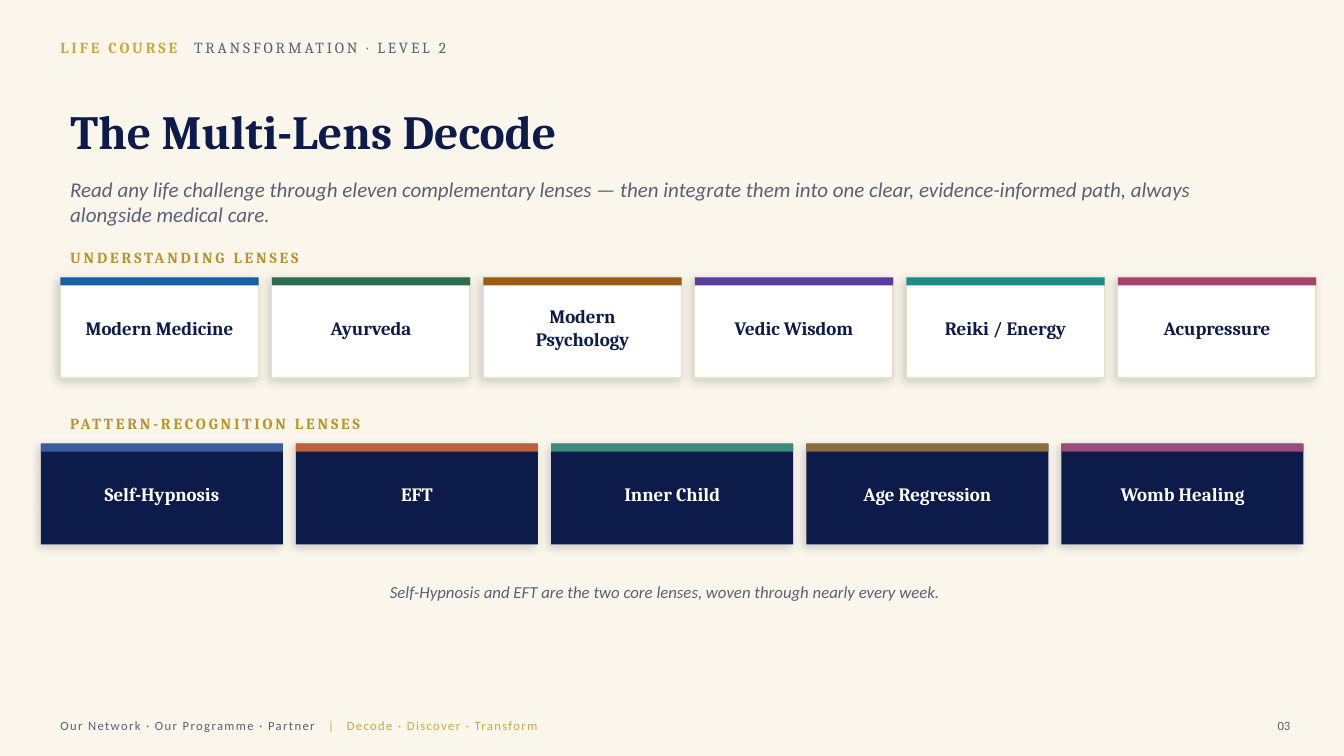
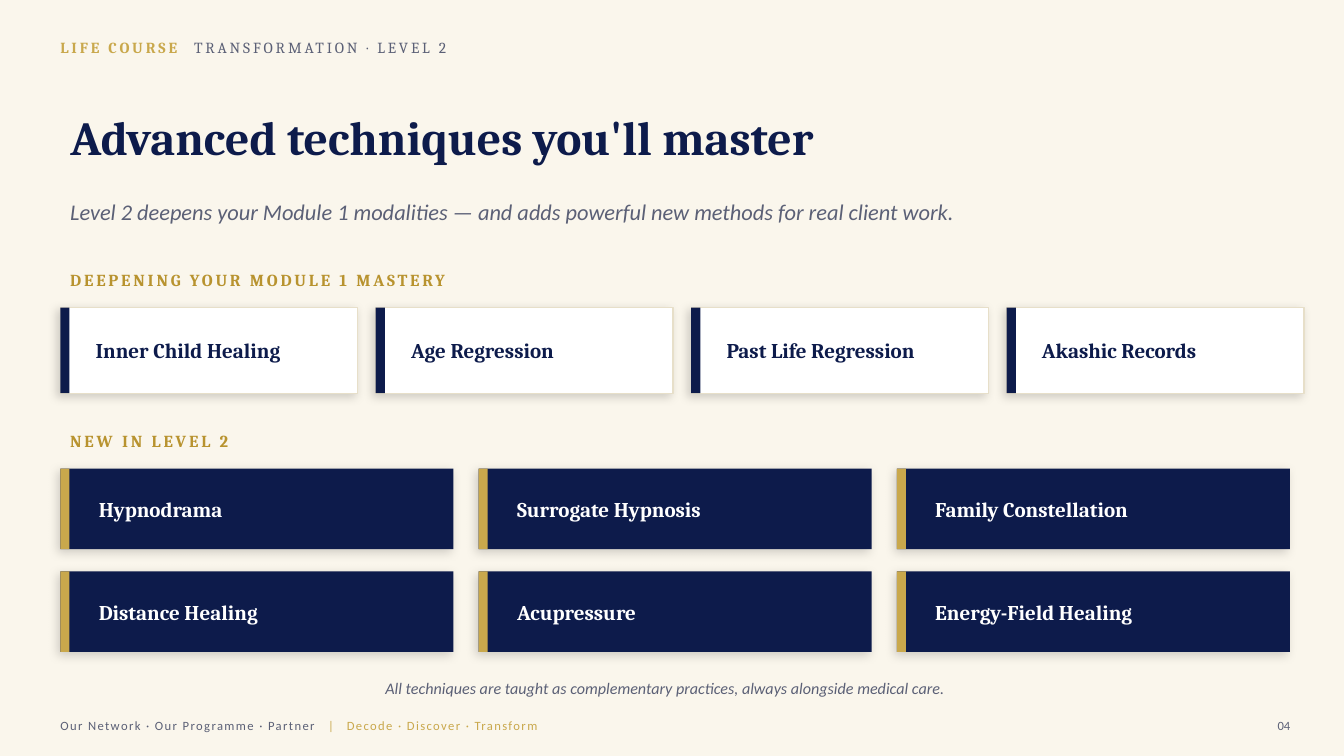
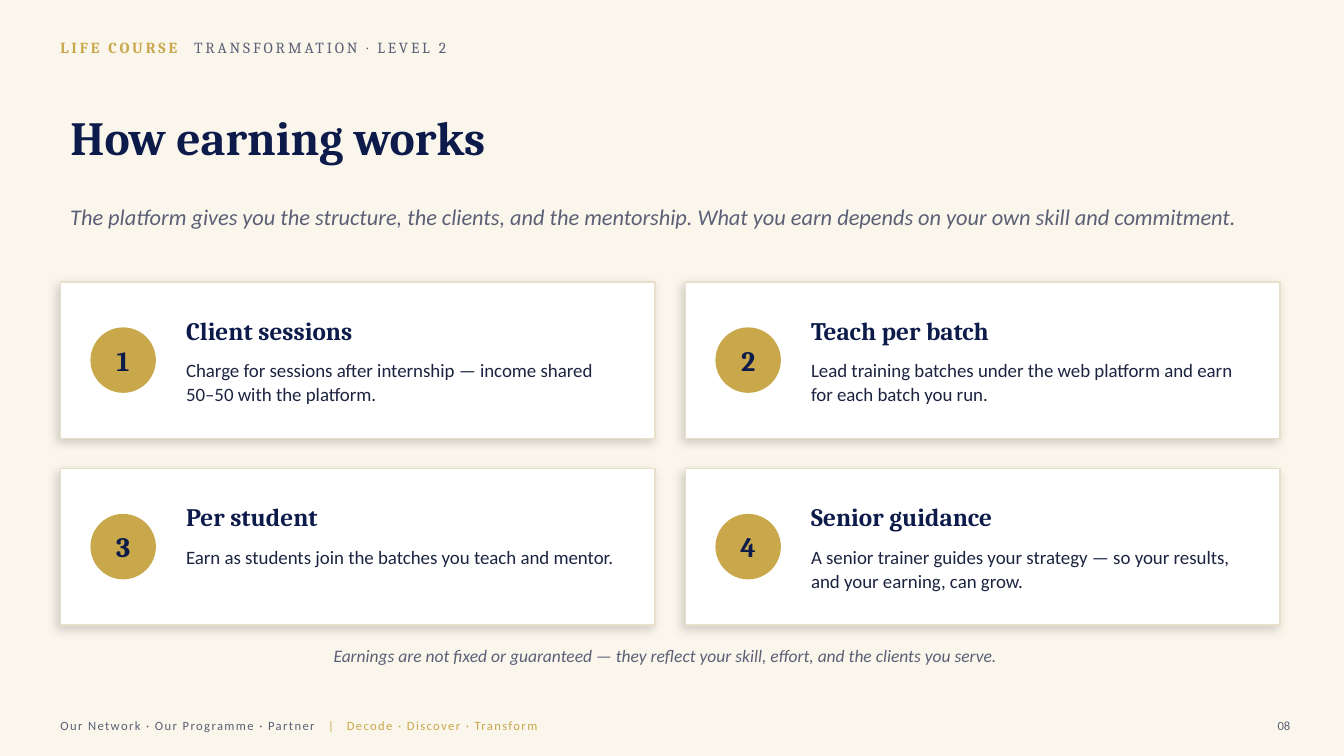
"""Build three slides on lenses, techniques and earning for a Level 2 programme."""
from pptx import Presentation
from pptx.dml.color import RGBColor
from pptx.enum.shapes import MSO_SHAPE as Kind
from pptx.enum.text import MSO_ANCHOR as Anchor, MSO_AUTO_SIZE as AutoSize, PP_ALIGN as Align
from pptx.oxml import parse_xml
from pptx.oxml.ns import nsdecls, qn
from pptx.util import Cm, Pt

NAVY, GOLD, OCHRE, GREY = "0D1B4B", "C9A84C", "B8932F", "5B6076"
CREAM, WHITE, SAND, INK = "FAF6EC", "FFFFFF", "E7DFC9", "1C2440"
SERIF, SANS = "Cambria", "Calibri"
LEFT, WIDE = 1.52, 30.48
hex_color = RGBColor.from_string


def write(shape, spans, size, color, face=SERIF, bold=False, italic=False,
          align=Align.LEFT, anchor=Anchor.MIDDLE, spacing=0, tabs=()):
    """Fill a shape with one paragraph; each span is a text and its own colour or None."""
    frame = shape.text_frame
    frame.word_wrap, frame.auto_size = True, AutoSize.NONE
    frame.vertical_anchor = anchor
    para = frame.paragraphs[0]
    para.alignment = align
    if tabs:
        stops = "".join(f'<a:tab pos="{Cm(stop)}" algn="l"/>' for stop in tabs)
        properties = shape.element.find(".//" + qn("a:pPr"))
        properties.append(parse_xml(f"<a:tabLst {nsdecls('a')}>{stops}</a:tabLst>"))
    para.font.name, para.font.size = face, Pt(size)
    para.font.bold, para.font.italic = bold, italic
    para.font.color.rgb = hex_color(color)
    for text, own_color in spans:
        span = para.add_run()
        span.text = text
        if own_color:
            span.font.color.rgb = hex_color(own_color)
    if spacing:
        for tag in ("a:defRPr", "a:rPr"):
            for item in shape.element.iter(qn(tag)):
                item.set("spc", str(spacing * 100))
    return para


def block(page, kind, box, fill, edge=None, raised=False):
    """Add a filled shape, with an optional edge and soft shadow."""
    shape = page.shapes.add_shape(kind, *map(Cm, box))
    shape.shadow.inherit = False
    shape.fill.solid()
    shape.fill.fore_color.rgb = hex_color(fill)
    if edge:
        shape.line.color.rgb = hex_color(edge)
        shape.line.width = Pt(1)
    else:
        shape.line.fill.background()
    if raised:
        shape.element.spPr.find(qn("a:effectLst")).append(parse_xml(
            f'<a:outerShdw {nsdecls("a")} blurRad="{Pt(7)}" dist="{Pt(3)}" dir="8100000" '
            'algn="bl" rotWithShape="0"><a:srgbClr val="000000"><a:alpha val="16000"/>'
            '</a:srgbClr></a:outerShdw>'))
    return shape


deck = Presentation()
deck.slide_width, deck.slide_height = Cm(33.87), Cm(19.05)
backdrop = deck.slide_master.background.fill
backdrop.solid()
backdrop.fore_color.rgb = hex_color(CREAM)

outlines = [
    ("03", "The Multi-Lens Decode", 2.41,
     "Read any life challenge through eleven complementary lenses — then integrate them "
     "into one clear, evidence-informed path, always alongside medical care.", 4.32, 1.52, 15,
     "Self-Hypnosis and EFT are the two core lenses, woven through nearly every week.",
     14.48, 0.89, 12),
    ("04", "Advanced techniques you'll master", 2.54,
     "Level 2 deepens your Module 1 modalities — and adds powerful new methods for real "
     "client work.", 4.57, 1.52, 16,
     "All techniques are taught as complementary practices, always alongside medical care.",
     16.89, 0.89, 11.5),
    ("08", "How earning works", 2.54,
     "The platform gives you the structure, the clients, and the mentorship. What you earn "
     "depends on your own skill and commitment.", 4.57, 1.78, 16,
     "Earnings are not fixed or guaranteed — they reflect your skill, effort, and the "
     "clients you serve.", 16, 1.02, 12.5),
]
pages = []
for (number, title, title_top, intro, intro_top, intro_height, intro_size,
     note, note_top, note_height, note_size) in outlines:
    page = deck.slides.add_slide(deck.slide_layouts[5])
    pages.append(page)

    heading = page.shapes.title
    heading.left, heading.top, heading.width, heading.height = map(Cm, (LEFT, title_top, WIDE, 1.78))
    write(heading, [(title, None)], 34, NAVY, bold=True)

    header = page.shapes.add_textbox(Cm(1.27), Cm(0.81), Cm(20.32), Cm(0.76))
    para = write(header, [("LIFE COURSE", GOLD), ("\tTRANSFORMATION · LEVEL 2", None)],
                 11, GREY, spacing=2, tabs=[3.37])
    para.runs[0].font.bold = True

    box = page.shapes.add_textbox(Cm(LEFT), Cm(intro_top), Cm(WIDE), Cm(intro_height))
    write(box, [(intro, None)], intro_size, GREY, SANS, italic=True)
    box = page.shapes.add_textbox(Cm(LEFT), Cm(note_top), Cm(WIDE), Cm(note_height))
    write(box, [(note, None)], note_size, GREY, SANS, italic=True, align=Align.CENTER)

    footer = page.shapes.add_textbox(Cm(1.27), Cm(17.91), Cm(29.21), Cm(0.76))
    write(footer, [("Our Network · Our Programme · Partner", None),
                   ("\t|\tDecode · Discover · Transform", GOLD)],
          9, GREY, SANS, spacing=1, tabs=[6.75, 7.22])
    box = page.shapes.add_textbox(Cm(31.5), Cm(17.91), Cm(1.27), Cm(0.76))
    write(box, [(number, None)], 9, GREY, SANS, align=Align.RIGHT)

lens_page, technique_page, earning_page = pages

sections = [
    (lens_page, "UNDERSTANDING LENSES", 6.1, 0.76, 11),
    (lens_page, "PATTERN-RECOGNITION LENSES", 10.29, 0.76, 11),
    (technique_page, "DEEPENING YOUR MODULE 1 MASTERY", 6.6, 0.89, 12),
    (technique_page, "NEW IN LEVEL 2", 10.67, 0.89, 12),
]
for page, label, top, height, size in sections:
    box = page.shapes.add_textbox(Cm(LEFT), Cm(top), Cm(WIDE), Cm(height))
    write(box, [(label, None)], size, OCHRE, bold=True, spacing=2)

lens_rows = [
    (LEFT, 6.99, 5, 5.33, WHITE, SAND, NAVY, [
        ("Modern Medicine", "185FA5"), ("Ayurveda", "2D6A4F"), ("Modern Psychology", "9A5B16"),
        ("Vedic Wisdom", "5B3D9E"), ("Reiki / Energy", "1F8A8A"), ("Acupressure", "A6446B")]),
    (1.03, 11.18, 6.1, 6.43, NAVY, None, WHITE, [
        ("Self-Hypnosis", "3A5BA0"), ("EFT", "C0603A"), ("Inner Child", "3C8C7A"),
        ("Age Regression", "8A6D3B"), ("Womb Healing", "9A4C7A")]),
]
for start, top, width, pitch, fill, edge, ink, lenses in lens_rows:
    for column, (lens, accent) in enumerate(lenses):
        left = start + column * pitch
        card = block(lens_page, Kind.RECTANGLE, (left, top, width, 2.54), fill, edge, raised=True)
        card.text_frame.margin_left = card.text_frame.margin_right = Cm(0.55)
        write(card, [(lens, None)], 13.5, ink, bold=True, align=Align.CENTER)
        block(lens_page, Kind.RECTANGLE, (left, top, width, 0.2), accent)

technique_grids = [
    (4, 7.75, 7.49, 2.16, 7.95, 0.89, WHITE, SAND, NAVY, NAVY, [
        "Inner Child Healing", "Age Regression", "Past Life Regression", "Akashic Records"]),
    (3, 11.81, 9.91, 2.03, 10.54, 0.97, NAVY, None, WHITE, GOLD, [
        "Hypnodrama", "Surrogate Hypnosis", "Family Constellation",
        "Distance Healing", "Acupressure", "Energy-Field Healing"]),
]
for columns, start, width, height, pitch, indent, fill, edge, ink, accent, names in technique_grids:
    for index, name in enumerate(names):
        row, column = divmod(index, columns)
        left, top = LEFT + column * pitch, start + row * 2.59
        card = block(technique_page, Kind.RECTANGLE, (left, top, width, height), fill, edge, raised=True)
        card.text_frame.margin_left = Cm(indent)
        write(card, [(name, None)], 15, ink, bold=True)
        block(technique_page, Kind.RECTANGLE, (left, top, 0.23, height), accent)

earnings = [
    ("Client sessions",
     "Charge for sessions after internship — income shared 50–50 with the platform."),
    ("Teach per batch",
     "Lead training batches under the web platform and earn for each batch you run."),
    ("Per student", "Earn as students join the batches you teach and mentor."),
    ("Senior guidance",
     "A senior trainer guides your strategy — so your results, and your earning, can grow."),
]
for index, (name, detail) in enumerate(earnings):
    row, column = divmod(index, 2)
    left, top = LEFT + column * 15.75, 7.11 + row * 4.7
    block(earning_page, Kind.RECTANGLE, (left, top, 14.99, 3.94), WHITE, SAND, raised=True)
    badge = block(earning_page, Kind.OVAL, (left + 0.76, top + 1.14, 1.65, 1.65), GOLD)
    write(badge, [(str(index + 1), None)], 20, NAVY, bold=True, align=Align.CENTER)
    box = earning_page.shapes.add_textbox(Cm(left + 2.92), Cm(top + 0.64), Cm(11.43), Cm(1.14))
    write(box, [(name, None)], 18, NAVY, bold=True)
    box = earning_page.shapes.add_textbox(Cm(left + 2.92), Cm(top + 1.78), Cm(11.43), Cm(1.91))
    para = write(box, [(detail, None)], 13.5, INK, SANS, anchor=Anchor.TOP)
    para.line_spacing = 1.05

deck.save("out.pptx")
